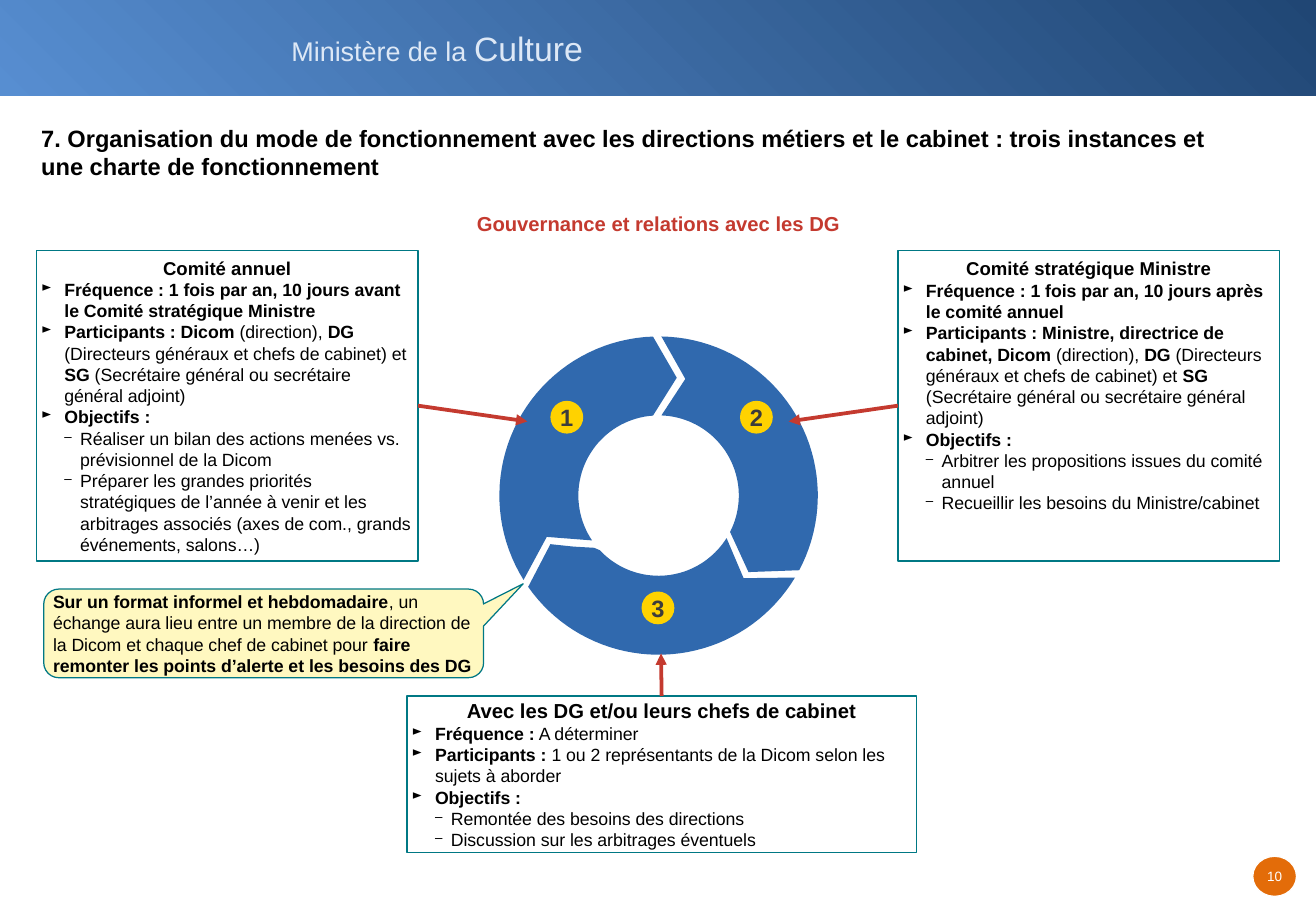
"""Build the slide on governance between the Dicom, the DG and the cabinet."""
import math

import lxml.etree
import pptx
import pptx.dml.color
import pptx.enum.dml
import pptx.enum.shapes
import pptx.enum.text
import pptx.oxml.ns
import pptx.util

Inches = pptx.util.Inches
Pt = pptx.util.Pt
SHAPE = pptx.enum.shapes.MSO_SHAPE
ALIGN = pptx.enum.text.PP_ALIGN
ANCHOR = pptx.enum.text.MSO_ANCHOR
qn = pptx.oxml.ns.qn

COLORS = {
    "navy": "204674", "sky": "578ED1", "pale": "DDE8F6", "ring": "3069AE",
    "red": "C43A2F", "teal": "007884", "yellow": "FFD200", "cream": "FFF8C0",
    "orange": "E36C09", "white": "FFFFFF", "black": "000000", "grey": "3C3C3C",
}
FONT = "Arial"
BULLETS = {1: ("►", 0.19, 0.19), 2: ("–", 0.32, 0.13)}

# Text between asterisks is bold; the number is the bullet level.
HEADING = ("7. Organisation du mode de fonctionnement avec les directions métiers "
           "et le cabinet : trois instances et une charte de fonctionnement")
SUBTITLE = "Gouvernance et relations avec les DG"
CALLOUT = ("*Sur un format informel et hebdomadaire*, un échange aura lieu entre un "
           "membre de la direction de la Dicom et chaque chef de cabinet pour *faire "
           "remonter les points d’alerte et les besoins des DG*")
COMMITTEES = [
    {"at": (0.3, 2.06, 3.14, 2.56), "anchor": ANCHOR.MIDDLE, "top": 0.04,
     "title": "Comité annuel", "size": 11, "site": 3, "target": (4.34, 3.47),
     "lines": [
         (1, "*Fréquence : 1 fois par an, 10 jours avant le Comité stratégique Ministre*"),
         (1, "*Participants : Dicom* (direction), *DG* (Directeurs généraux et chefs de "
             "cabinet) et *SG* (Secrétaire général ou secrétaire général adjoint)"),
         (1, "*Objectifs :*"),
         (2, "Réaliser un bilan des actions menées vs. prévisionnel de la Dicom"),
         (2, "Préparer les grandes priorités stratégiques de l’année à venir et les "
             "arbitrages associés (axes de com., grands événements, salons…)")]},
    {"at": (7.39, 2.06, 3.14, 2.56), "anchor": ANCHOR.TOP, "top": 0.06,
     "title": "Comité stratégique Ministre", "size": 11, "site": 1, "target": (6.49, 3.47),
     "lines": [
         (1, "*Fréquence : 1 fois par an, 10 jours après le comité annuel*"),
         (1, "*Participants : Ministre, directrice de cabinet, Dicom* (direction), *DG* "
             "(Directeurs généraux et chefs de cabinet) et *SG* (Secrétaire général ou "
             "secrétaire général adjoint)"),
         (1, "*Objectifs :*"),
         (2, "Arbitrer les propositions issues du comité annuel"),
         (2, "Recueillir les besoins du Ministre/cabinet")]},
    {"at": (3.35, 5.73, 4.19, 1.29), "anchor": ANCHOR.MIDDLE, "top": 0.04,
     "title": "Avec les DG et/ou leurs chefs de cabinet", "size": 12, "site": 0,
     "target": (5.44, 5.38),
     "lines": [
         (1, "*Fréquence :* A déterminer"),
         (1, "*Participants :* 1 ou 2 représentants de la Dicom selon les sujets à aborder"),
         (1, "*Objectifs :*"),
         (2, "Remontée des besoins des directions"),
         (2, "Discussion sur les arbitrages éventuels")]},
]

RING_CENTER, OUTER, INNER = (5.42, 4.08), 1.31, 0.66
SEGMENTS = [
    {"outer": (31, 145), "tip": [(4.53, 4.48), (4.72, 4.5), (4.89, 4.51)],
     "inner": (137, 32), "notch": (6.12, 4.76)},
    {"outer": (148, 268), "tip": [(5.57, 3.11)], "inner": (266, 146), "notch": (4.5, 4.42)},
    {"outer": (271, 388), "tip": [(6.16, 4.71)], "inner": (387, 272), "notch": (5.64, 3.12)},
]
BADGES = [("1", 4.53, 3.3), ("2", 6.09, 3.3), ("3", 5.28, 4.87)]


def rgb(name):
    return pptx.dml.color.RGBColor.from_string(COLORS[name])


def set_font(font, size, color, bold=None):
    font.name, font.size, font.bold = FONT, Pt(size), bold
    font.color.rgb = rgb(color)


def set_frame(item, insets=(0.1, 0.05, 0.1, 0.05), anchor=ANCHOR.TOP, wrap=True):
    frame = item.text_frame
    frame.margin_left, frame.margin_top, frame.margin_right, frame.margin_bottom = map(Inches, insets)
    frame.vertical_anchor, frame.word_wrap = anchor, wrap
    return frame


def write(para, text, size, color="black", align=ALIGN.LEFT, level=0):
    para.alignment = align
    if level:
        symbol, margin, hang = BULLETS[level]
        props = para._p.get_or_add_pPr()
        props.set("marL", str(Inches(margin)))
        props.set("indent", str(-Inches(hang)))
        lxml.etree.SubElement(props, qn("a:buSzPct")).set("val", "75000")
        lxml.etree.SubElement(props, qn("a:buChar")).set("char", symbol)
    set_font(para.font, size, color)
    for index, part in enumerate(text.split("*")):
        if part:
            span = para.add_run()
            span.text = part
            span.font.bold = index % 2 == 1


def add_box(page, kind, at, fill=None, line=None):
    box = page.shapes.add_shape(kind, *map(Inches, at))
    box.shadow.inherit = False
    style(box, fill, line)
    return box


def style(box, fill, line):
    if fill:
        box.fill.solid()
        box.fill.fore_color.rgb = rgb(fill)
    else:
        box.fill.background()
    if line:
        box.line.color.rgb = rgb(line)
        box.line.width = Pt(0.75)
    else:
        box.line.fill.background()


def add_label(page, at, text, size, color="black", align=ALIGN.LEFT, anchor=ANCHOR.TOP):
    label = page.shapes.add_textbox(*map(Inches, at))
    write(set_frame(label, anchor=anchor).paragraphs[0], text, size, color, align)


def add_banner(page):
    banner = add_box(page, SHAPE.RECTANGLE, (0, 0, 10.83, 0.79))
    banner.fill.gradient()
    banner.fill.gradient_angle = 225
    for stop, name in zip(banner.fill.gradient_stops, ("navy", "sky")):
        stop.color.rgb = rgb(name)
    label = page.shapes.add_textbox(*map(Inches, (2.3, 0.18, 2.63, 0.44)))
    para = set_frame(label, wrap=False).paragraphs[0]
    for text, size in (("Ministère de la ", 16), ("Culture", 20)):
        span = para.add_run()
        span.text = text
        set_font(span.font, size, "pale")


def arc(radius, start, end, steps=40):
    angles = [math.radians(start + (end - start) * step / steps) for step in range(steps + 1)]
    return [(RING_CENTER[0] + radius * math.cos(angle), RING_CENTER[1] + radius * math.sin(angle))
            for angle in angles]


def add_segment(page, segment):
    outline = (arc(OUTER, *segment["outer"]) + segment["tip"]
               + arc(INNER, *segment["inner"]) + [segment["notch"]])
    points = [(Inches(x), Inches(y)) for x, y in outline]
    builder = page.shapes.build_freeform(*points[0])
    builder.add_line_segments(points[1:], close=True)
    piece = builder.convert_to_shape()
    piece.shadow.inherit = False
    style(piece, "ring", None)


def add_committee(page, committee):
    box = add_box(page, SHAPE.RECTANGLE, committee["at"], line="teal")
    frame = set_frame(box, (0.04, committee["top"], 0.04, 0.04), committee["anchor"])
    write(frame.paragraphs[0], f"*{committee['title']}*", committee["size"], align=ALIGN.CENTER)
    for level, text in committee["lines"]:
        write(frame.add_paragraph(), text, 10.5, level=level)
    end = [Inches(value) for value in committee["target"]]
    arrow = page.shapes.add_connector(pptx.enum.shapes.MSO_CONNECTOR.STRAIGHT, *end, *end)
    arrow.begin_connect(box, committee["site"])
    arrow.line.color.rgb = rgb("red")
    arrow.line.width = Pt(2.25)
    lxml.etree.SubElement(arrow.line._get_or_add_ln(), qn("a:tailEnd")).set("type", "triangle")
    lxml.etree.SubElement(arrow._element.spPr, qn("a:effectLst"))


def add_disc(page, at, fill, line, text, size, color):
    disc = add_box(page, SHAPE.OVAL, at, fill, line)
    frame = set_frame(disc, (0.04,) * 4, ANCHOR.MIDDLE, wrap=False)
    write(frame.paragraphs[0], text, size, color, ALIGN.CENTER)


def main():
    deck = pptx.Presentation()
    deck.slide_width, deck.slide_height = Inches(10.83), Inches(7.5)
    page = deck.slides.add_slide(deck.slide_layouts[6])
    add_banner(page)
    add_disc(page, (10.31, 7.05, 0.36, 0.33), "orange", "white", "10", 8, "white")
    add_label(page, (3.42, 1.69, 4, 0.29), f"*{SUBTITLE}*", 12, "red", ALIGN.CENTER, ANCHOR.MIDDLE)
    for segment in SEGMENTS:
        add_segment(page, segment)
    for committee in COMMITTEES:
        add_committee(page, committee)
    for number, left, top in BADGES:
        add_disc(page, (left, top, 0.27, 0.27), "yellow", None, f"*{number}*", 14, "grey")
    callout = add_box(page, SHAPE.ROUNDED_RECTANGULAR_CALLOUT, (0.36, 4.85, 3.62, 0.73), "cream", "teal")
    for index, value in enumerate((0.59, -0.56, 0.17)):
        callout.adjustments[index] = value
    frame = set_frame(callout, (0.04, 0.08, 0, 0.08), ANCHOR.MIDDLE)
    write(frame.paragraphs[0], CALLOUT, 10.5)
    add_label(page, (0.24, 0.97, 9.92, 0.57), f"*{HEADING}*", 14)
    deck.save("out.pptx")


if __name__ == "__main__":
    main()
